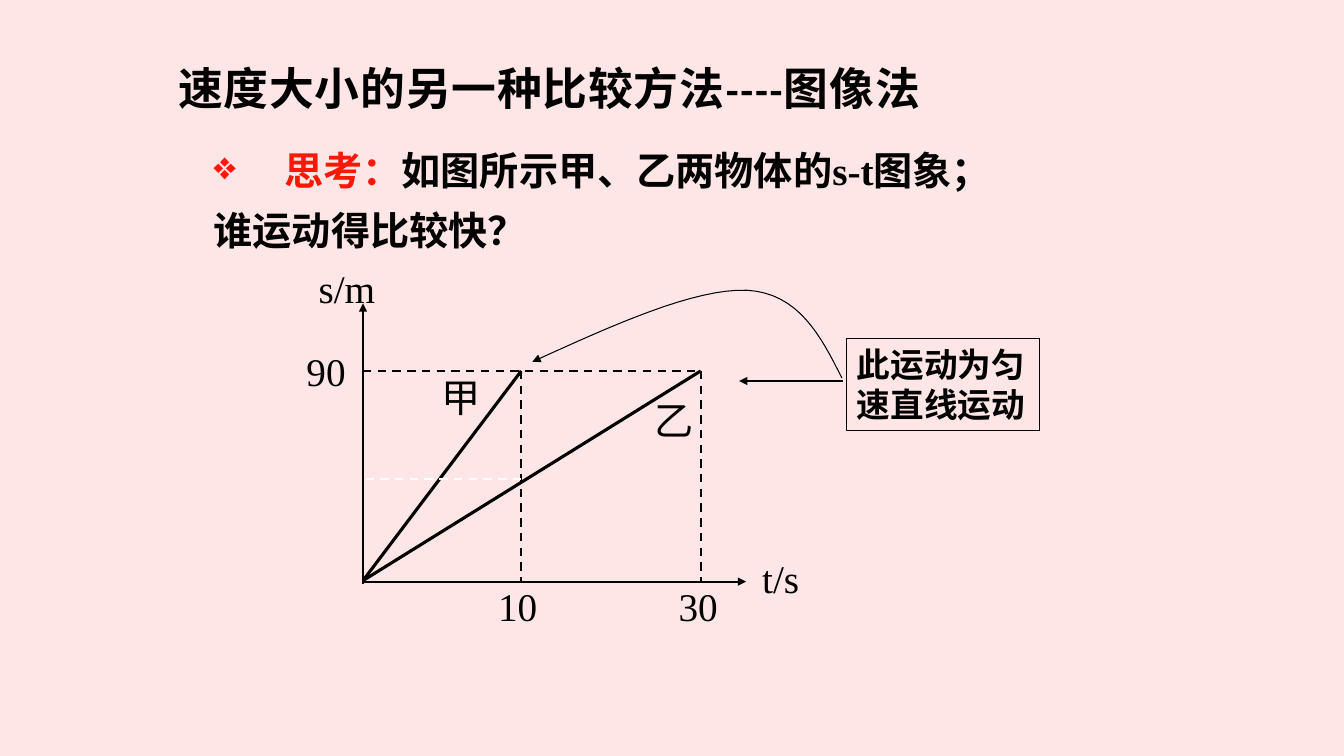
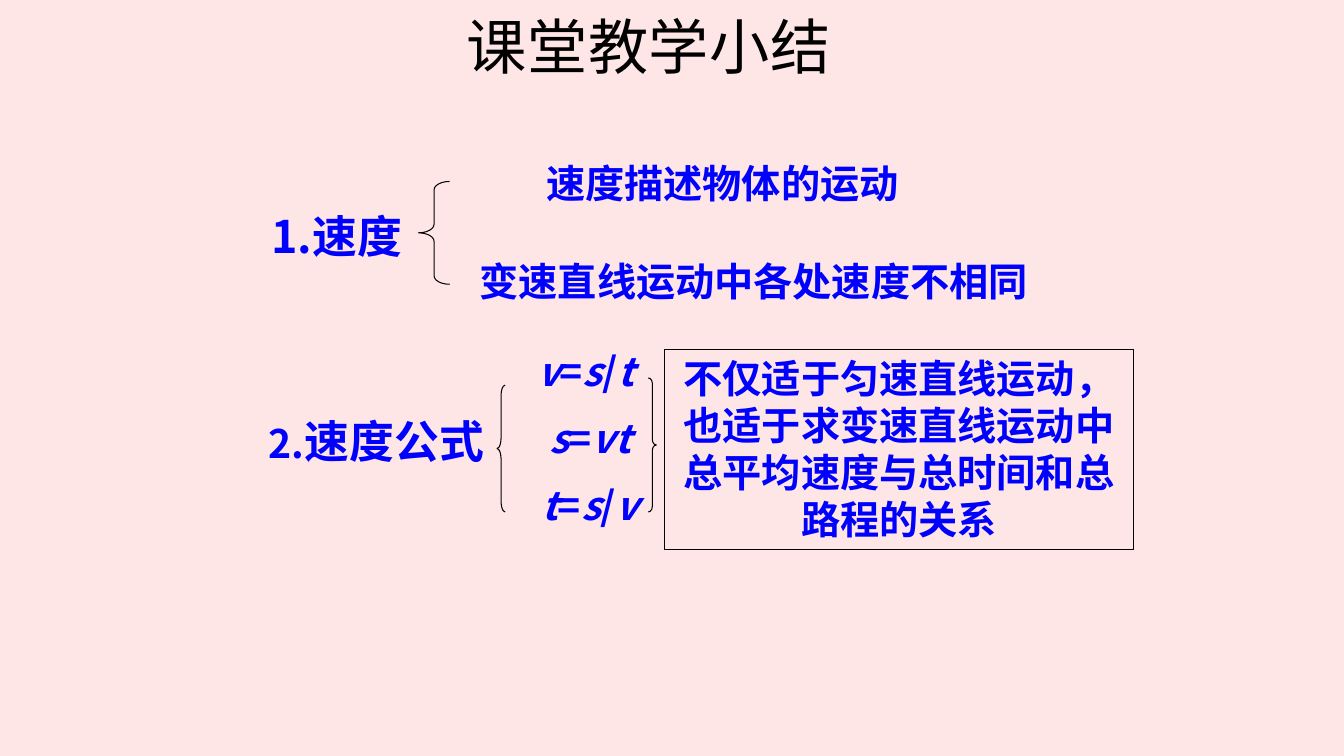
from dataclasses import dataclass
from lxml import etree
from pptx import Presentation
from pptx import util as u
from pptx.dml import color as clr
from pptx.enum import dml, shapes, text
from pptx.oxml import ns


@dataclass(frozen=True)
class Theme:
    # Colours
    back: str = "FFE6E6"
    ink: str = "000000"
    red: str = "FC1806"
    blue: str = "0000FF"
    white: str = "FFFFFF"
    # Fonts
    head: str = "Cambria"
    serif: str = "Times New Roman"
    sans: str = "Noto Sans CJK SC"
    comic: str = "Comic Neue"
    # Type sizes and line widths
    top: int = 43
    big: int = 32
    mid: int = 28
    small: int = 24
    thin: float = 0.75
    axis: float = 1.5
    bold: float = 2.25


T = Theme()
LEFT, MID, JUST = (text.PP_ALIGN.LEFT, text.PP_ALIGN.CENTER,
                   text.PP_ALIGN.JUSTIFY)
BOX = shapes.MSO_SHAPE


def rgb(hue):
    return clr.RGBColor.from_string(hue)


def sub(node, tag, **keys):
    return etree.SubElement(node, ns.qn(tag), **keys)


# Text
def run(para, words, size, font, hue=T.ink, bold=False, tilt=False, gap=0):
    part = para.add_run()
    part.text = words
    face = part.font
    face.size, face.name = u.Pt(size), font
    face.bold, face.italic = bold, tilt
    face.color.rgb = rgb(hue)
    props = part._r.get_or_add_rPr()
    sub(props, "a:ea", typeface=T.sans)
    if gap:
        props.set("spc", str(gap))


def fill(shape, paras, align=LEFT, lead=1.2, inset=True,
         anchor=text.MSO_ANCHOR.TOP):
    """Each paragraph is a list of runs: (words, size, font, options)."""
    frame = shape.text_frame
    frame.word_wrap = True
    frame.vertical_anchor = anchor
    if not inset:
        frame.margin_left = frame.margin_right = 0
        frame.margin_top = frame.margin_bottom = 0
    for num, runs in enumerate(paras):
        para = frame.add_paragraph() if num else frame.paragraphs[0]
        para.alignment = align
        size = max(item[1] for item in runs)
        para.line_spacing = u.Pt(round(size * lead, 1))
        if num:
            para.space_before = u.Pt(size / 2)
        for words, pts, font, opts in runs:
            run(para, words, pts, font, **opts)
    return frame


def note(slide, at, paras, **opts):
    box = slide.shapes.add_textbox(*map(u.Inches, at))
    return fill(box, paras, **opts)


def title(slide, at, words, size, font, **opts):
    bold = font == T.head
    note(slide, at, [[(words, size, font, dict(bold=bold, gap=50))]], **opts)


def bullet(para, char, tab):
    props = para._p.get_or_add_pPr()
    props.set("marL", "0")
    props.set("indent", "0")
    sub(props, "a:buChar", char=char)
    tabs = sub(props, "a:tabLst")
    sub(tabs, "a:tab", pos=str(u.Inches(tab)), algn="l")


# Lines and shapes
def pen(line, width, hue=T.ink, dash=False, arrow=False):
    line.color.rgb = rgb(hue)
    line.width = u.Pt(width)
    if dash:
        line.dash_style = dml.MSO_LINE.DASH
    if arrow:
        sub(line._get_or_add_ln(), "a:tailEnd", type="triangle")


def link(slide, x1, y1, x2, y2, width, **opts):
    line = slide.shapes.add_connector(
        shapes.MSO_CONNECTOR.STRAIGHT, *map(u.Inches, (x1, y1, x2, y2)))
    pen(line.line, width, **opts)
    sub(line._element.spPr, "a:effectLst")


def hollow(shape, **opts):
    shape.shadow.inherit = False
    shape.fill.background()
    pen(shape.line, T.thin, **opts)


def frame(slide, kind, at, adj=()):
    shape = slide.shapes.add_shape(kind, *map(u.Inches, at))
    hollow(shape)
    for num, val in enumerate(adj):
        shape.adjustments[num] = val
    return shape


def curve(slide, start, bends, steps=16):
    dots, last = [], start
    for bend in bends:
        knots = (last, *bend)
        for step in range(1, steps + 1):
            t = step / steps
            mix = ((1 - t) ** 3, 3 * t * (1 - t) ** 2,
                   3 * t * t * (1 - t), t ** 3)
            dots.append(tuple(
                u.Inches(sum(m * k[axis] for m, k in zip(mix, knots)))
                for axis in (0, 1)))
        last = bend[-1]
    path = slide.shapes.build_freeform(*map(u.Inches, start))
    path.add_line_segments(dots, close=False)
    hollow(path.convert_to_shape(), arrow=True)


def page(deck):
    slide = deck.slides.add_slide(deck.slide_layouts[6])
    slide.background.fill.solid()
    slide.background.fill.fore_color.rgb = rgb(T.back)
    return slide


# Graph of distance against time
def graph(slide):
    left, base, top, ten, last = 3.6, 5.77, 3.68, 5.17, 6.95
    link(slide, left, base, 7.4, base, T.axis, arrow=True)
    link(slide, left, base + 0.02, left, 3.01, T.axis, arrow=True)
    link(slide, left, top, last, top, T.axis, dash=True)
    for x in (last, ten):
        link(slide, x, top, x, base, T.axis, dash=True)
    for x in (ten, last):
        link(slide, left, base - 0.01, x, top, T.bold)
    link(slide, ten, 4.75, left, 4.75, T.axis, hue=T.white, dash=True)
    for words, x, y in (("s/m", 3.16, 2.6), ("10", 4.94, 5.76),
                        ("30", 6.73, 5.76), ("90", 3.04, 3.43),
                        ("甲", 4.38, 3.68), ("乙", 6.49, 3.91),
                        ("t/s", 7.56, 5.48)):
        note(slide, (x, y, 0.8, 0.6), [[(words, T.mid, T.serif, {})]],
             align=JUST, lead=1.25, inset=False)


def compare(deck):
    slide = page(deck)
    title(slide, (1.67, 0.36, 8.35, 0.83), "速度大小的另一种比较方法----图像法",
          T.big, T.head, anchor=text.MSO_ANCHOR.BOTTOM)
    # Question
    ask = note(slide, (2.02, 1.27, 8.17, 1.32), [[
        ("\t思考：", T.mid, T.serif, dict(hue=T.red, bold=True)),
        ("如图所示甲、乙两物体的s-t图象；谁运动得比较快？",
         T.mid, T.serif, dict(bold=True))]], lead=1.54)
    bullet(ask.paragraphs[0], "❖", 0.7)
    graph(slide)
    # Callout with its two arrows
    box = frame(slide, BOX.RECTANGLE, (8.4, 3.36, 1.91, 0.91))
    fill(box, [[("此运动为匀速直线运动", T.small, T.serif, dict(bold=True))]])
    link(slide, 8.36, 3.78, 7.33, 3.78, T.thin, arrow=True)
    curve(slide, (8.35, 3.75), (
        ((8.14, 3.33), (7.92, 2.91), (7.41, 2.88)),
        ((6.89, 2.86), (6.09, 3.22), (5.28, 3.59))))


def recap(deck):
    slide = page(deck)
    blue = dict(hue=T.blue, bold=True)
    title(slide, (3.28, 0, 6.45, 0.91), "课堂教学小结 ", T.top, T.sans,
          align=MID, anchor=text.MSO_ANCHOR.MIDDLE)
    # Topics and their points
    for at, runs in (
            ((2.45, 2.02, 1.78, 0.64), [("1.速度", T.big, T.sans, blue)]),
            ((4.46, 1.53, 5.41, 0.57),
             [("速度描述物体的运动", T.mid, T.comic, blue)]),
            ((4.54, 2.5, 5.87, 0.57),
             [("变速直线运动中各处速度不相同", T.mid, T.comic, blue)]),
            ((2.53, 4.06, 2.41, 0.64),
             [("2.", T.mid, T.sans, blue),
              ("速度公式", T.big, T.sans, blue)])):
        note(slide, at, [runs], align=MID)
    # Formulas: letters slant, signs stand upright
    rows = (("v", "=", "s", "/", "t "), ("s", "=", "vt"),
            ("t", "=", "s", "/", "v"))
    note(slide, (5.1, 3.4, 1.5, 1.98),
         [[(part, T.mid, T.sans, dict(blue, tilt=part not in "=/"))
           for part in row] for row in rows], align=MID)
    # Braces
    for kind, at, adj in (
            (BOX.LEFT_BRACE, (4.15, 1.8, 0.31, 1.02), 0.27),
            (BOX.LEFT_BRACE, (4.93, 3.82, 0.08, 1.26), 1.34),
            (BOX.RIGHT_BRACE, (6.43, 3.75, 0.08, 1.33), 0.67)):
        frame(slide, kind, at, (adj, 0.5))
    # Scope of the formulas
    box = frame(slide, BOX.RECTANGLE, (6.59, 3.47, 4.65, 1.98))
    fill(box, [[("不仅适于匀速直线运动，也适于求变速直线运动中"
                 "总平均速度与总时间和总路程的关系",
                 T.mid, T.comic, blue)]], align=MID)


def main():
    deck = Presentation()
    deck.slide_width, deck.slide_height = u.Inches(13.33), u.Inches(7.5)
    compare(deck)
    recap(deck)
    deck.save("out.pptx")


if __name__ == "__main__":
    main()
